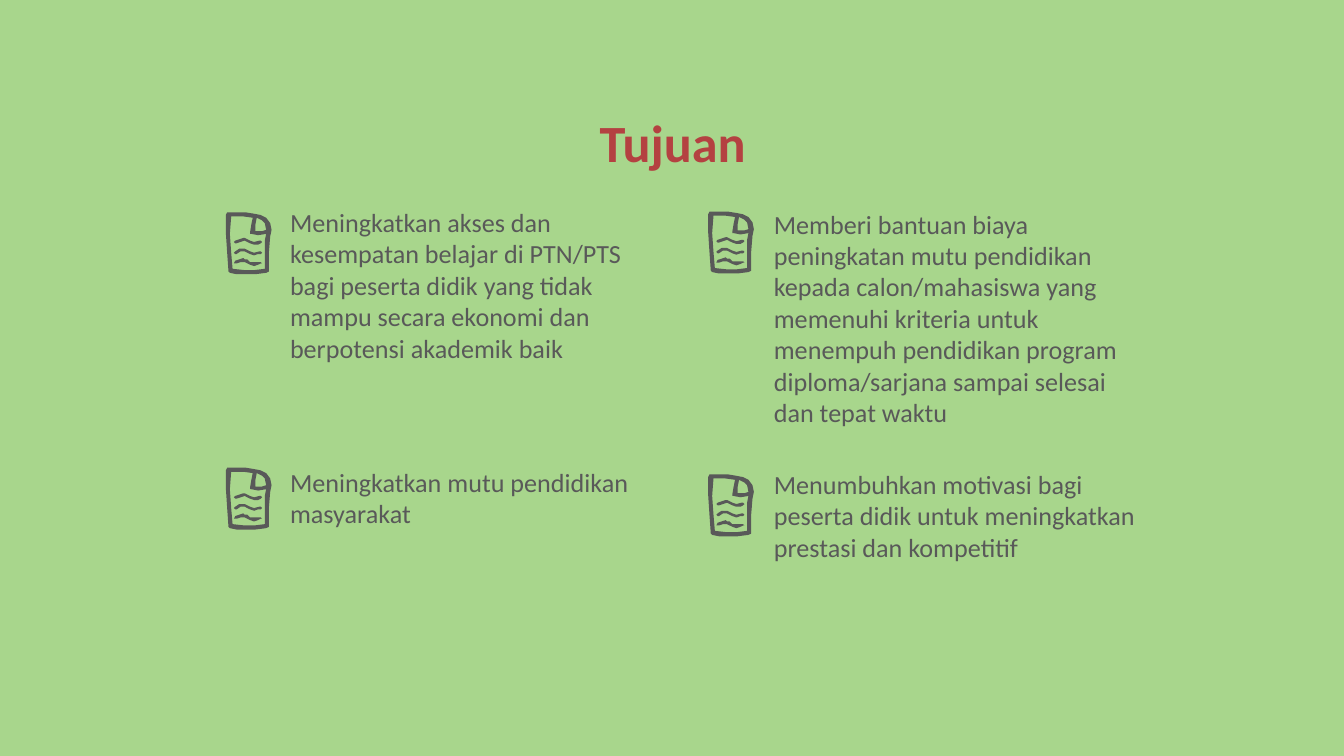
from dataclasses import dataclass

from pptx import Presentation
from pptx.dml.color import RGBColor
from pptx.enum.text import MSO_ANCHOR as Anchor, MSO_AUTO_SIZE as AutoSize, PP_ALIGN as Align
from pptx.util import Pt


@dataclass
class Theme:
    background: RGBColor = RGBColor.from_string("A8D68C")
    heading: RGBColor = RGBColor.from_string("B44141")
    text: RGBColor = RGBColor.from_string("595959")
    font: str = "Calibri"
    title_size: int = 28
    body_size: int = 14


theme = Theme()

GRID = Pt(0.72)
PAGE_OUTLINE = [(2, 0), (1, 0.5), (0.5, 1.5), (0.3, 15), (0.8, 30), (1.6, 43.5), (2.8, 45),
                (8, 45.8), (14, 46), (22, 45.6), (30, 45), (31.5, 44.4), (32, 43.5),
                (32.3, 30), (33, 18), (33.7, 13), (33, 8), (30, 4), (26, 1.7), (21, 0.6), (15, 0.3)]
PAGE_INSIDE = [(3.5, 3), (8, 3.3), (13, 3.2), (20, 3.7), (19.3, 9), (18.2, 15), (18.4, 15.8),
               (19.2, 16.3), (24, 17), (30, 16), (29.4, 21), (29, 30), (28.7, 42),
               (21, 42.6), (14, 43), (5, 42.3), (4, 30), (3.4, 16)]
FOLD_INSIDE = [(22.7, 4.2), (27, 6), (29, 8.5), (29.9, 13), (27, 13.6), (24, 13.9), (21.5, 13.7), (22.3, 9)]
WAVE = [(13, 19), (10, 19.5), (7, 21), (6.4, 22), (7, 23), (8, 23), (11, 21.6), (13.5, 21.1),
        (16, 22), (18, 23.4), (21, 24), (24, 23.6), (26, 22.9), (26.6, 22), (26, 21.2), (25, 21.2),
        (21, 21.9), (18, 21.2), (16, 19.8), (14, 19.1)]
WAVE_GAP = 7.75

GOALS = [
    (121, 113.8, 148.3, 107.3, 211.7, 90.7,
     "Meningkatkan akses dan kesempatan belajar di PTN/PTS bagi peserta didik yang tidak "
     "mampu secara ekonomi dan berpotensi akademik baik"),
    (121, 250.6, 148.3, 246.2, 211.7, 41,
     "Meningkatkan mutu pendidikan masyarakat"),
    (379.4, 113.4, 407.5, 106.6, 211.7, 127.4,
     "Memberi bantuan biaya peningkatan mutu pendidikan kepada calon/mahasiswa yang memenuhi "
     "kriteria untuk menempuh pendidikan program diploma/sarjana sampai selesai dan tepat waktu"),
    (379.4, 254.2, 407.5, 247, 211.7, 58.3,
     "Menumbuhkan motivasi bagi peserta didik untuk meningkatkan prestasi dan kompetitif"),
]


def write_text(shape, text, size, color, bold=False):
    frame = shape.text_frame
    frame.word_wrap = True
    frame.auto_size = AutoSize.NONE
    frame.vertical_anchor = Anchor.MIDDLE
    frame.margin_left = frame.margin_right = Pt(7.2)
    frame.margin_top = frame.margin_bottom = Pt(7.2)
    paragraph = frame.paragraphs[0]
    run = paragraph.add_run()
    run.text = text
    run.font.name = theme.font
    run.font.size = Pt(size)
    run.font.bold = bold
    run.font.color.rgb = color
    return paragraph


def draw_outline(group, contours, left, top):
    first, *others = contours
    builder = group.shapes.build_freeform(*first[0], scale=GRID)
    builder.add_line_segments(first[1:])
    for contour in others:
        builder.move_to(*contour[0])
        builder.add_line_segments(contour[1:])
    shape = builder.convert_to_shape(Pt(left), Pt(top))
    shape.shadow.inherit = False
    shape.fill.solid()
    shape.fill.fore_color.rgb = theme.text
    shape.line.fill.background()


presentation = Presentation()
presentation.slide_width = Pt(720)
presentation.slide_height = Pt(405)
slide = presentation.slides.add_slide(presentation.slide_layouts[5])
slide.background.fill.solid()
slide.background.fill.fore_color.rgb = theme.background

title = slide.shapes.title
title.left, title.top, title.width, title.height = Pt(151.9), Pt(56.2), Pt(416.9), Pt(45.4)
paragraph = write_text(title, "Tujuan", theme.title_size, theme.heading, bold=True)
paragraph.alignment = Align.CENTER
paragraph.line_spacing = 0.8

for icon_left, icon_top, left, top, width, height, goal in GOALS:
    icon = slide.shapes.add_group_shape()
    draw_outline(icon, [PAGE_OUTLINE, PAGE_INSIDE, FOLD_INSIDE], icon_left, icon_top)
    for row in range(3):
        wave = [(x, y + row * WAVE_GAP) for x, y in WAVE]
        draw_outline(icon, [wave], icon_left, icon_top)
    box = slide.shapes.add_textbox(Pt(left), Pt(top), Pt(width), Pt(height))
    write_text(box, goal, theme.body_size, theme.text)

presentation.save("out.pptx")
